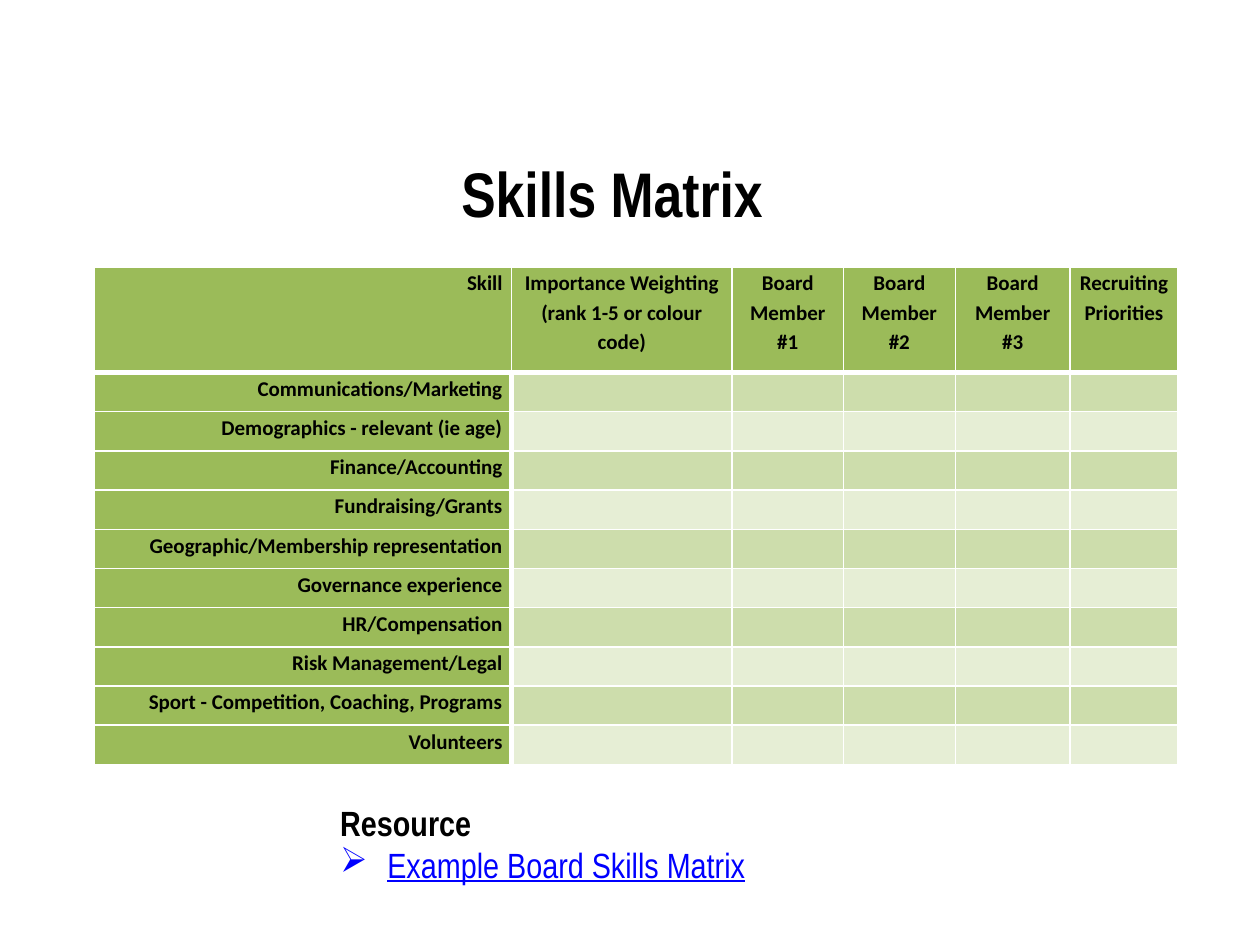
from dataclasses import dataclass

import pptx
import pptx.dml.color
import pptx.enum.text
import pptx.oxml
import pptx.oxml.ns
import pptx.util

Cm = pptx.util.Cm
Pt = pptx.util.Pt
Align = pptx.enum.text.PP_ALIGN

BLACK, WHITE, LINK_BLUE = "000000", "FFFFFF", "0000FF"
GREEN, BAND_COLOURS = "9BBB59", ("CDDDAC", "E6EED5")
THIN, THICK = 1, 3


@dataclass
class Column:
    heading: str
    width: float
    alignment: Align = Align.CENTER


COLUMNS = [
    Column("Skill", 8.41, Align.RIGHT),
    Column("Importance Weighting (rank 1-5 or colour code)", 4.45),
    Column("Board Member #1", 2.24),
    Column("Board Member #2", 2.26),
    Column("Board Member #3", 2.31),
    Column("Recruiting Priorities", 2.18),
]
SKILLS = [
    "Communications/Marketing",
    "Demographics - relevant (ie age)",
    "Finance/Accounting",
    "Fundraising/Grants",
    "Geographic/Membership representation",
    "Governance experience",
    "HR/Compensation",
    "Risk Management/Legal",
    "Sport - Competition, Coaching, Programs",
    "Volunteers",
]
HEADER_HEIGHT, ROW_HEIGHT = 2.13, 0.79


def colour(value: str):
    return pptx.dml.color.RGBColor.from_string(value)


def write(paragraph, text: str, *, size: float, font: str, color: str = BLACK,
          bold: bool = True, underline: bool = False, alignment=Align.LEFT,
          line_spacing: float = 1.0, space_after: float = 0) -> None:
    paragraph.alignment = alignment
    paragraph.line_spacing = line_spacing
    paragraph.space_after = Pt(space_after)
    # An empty cell still needs its font size, or its row grows
    target = paragraph.font
    if text:
        run = paragraph.add_run()
        run.text = text
        target = run.font
    target.size = Pt(size)
    target.name = font
    target.bold = bold
    target.underline = underline
    target.color.rgb = colour(color)


def add_bullet(paragraph, character: str, indent: float) -> None:
    properties = paragraph._p.get_or_add_pPr()
    properties.set("marL", str(Cm(indent)))
    properties.set("indent", str(-Cm(indent)))
    bullet = pptx.oxml.parse_xml(
        f'<a:buChar {pptx.oxml.ns.nsdecls("a")} char="{character}"/>')
    properties.append(bullet)


def add_text_frame(slide, left: float, top: float, width: float, height: float,
                   margin: float):
    box = slide.shapes.add_textbox(Cm(left), Cm(top), Cm(width), Cm(height))
    frame = box.text_frame
    frame.word_wrap = True
    frame.margin_left = frame.margin_right = Cm(margin)
    frame.margin_top = frame.margin_bottom = Cm(margin)
    return frame


def set_borders(cell, **widths: float) -> None:
    properties = cell._tc.get_or_add_tcPr()
    for position, side in enumerate("LRTB"):
        width = Pt(widths.get(side, THIN))
        line = pptx.oxml.parse_xml(
            f'<a:ln{side} {pptx.oxml.ns.nsdecls("a")} w="{width}"><a:solidFill>'
            f'<a:srgbClr val="{WHITE}"/></a:solidFill></a:ln{side}>')
        properties.insert(position, line)


def fill_cell(cell, row: int, column: int, text: str) -> None:
    is_label = row == 0 or column == 0
    cell.fill.solid()
    cell.fill.fore_color.rgb = colour(
        GREEN if is_label else BAND_COLOURS[(row - 1) % 2])
    cell.margin_left = cell.margin_right = Cm(0.18)
    cell.margin_top = cell.margin_bottom = 0
    set_borders(
        cell,
        L=THICK if row > 0 and column == 1 else THIN,
        R=THICK if row > 0 and column == 0 else THIN,
        T=THICK if row == 1 else THIN,
        B=THICK if row == 0 else THIN,
    )
    write(cell.text_frame.paragraphs[0], text, size=12, font="Calibri",
          alignment=COLUMNS[column].alignment,
          line_spacing=1.15 if text else 1.0, space_after=10 if text else 0)


def add_skills_table(slide, left: float, top: float) -> None:
    width = sum(column.width for column in COLUMNS)
    height = HEADER_HEIGHT + ROW_HEIGHT * len(SKILLS)
    table = slide.shapes.add_table(
        len(SKILLS) + 1, len(COLUMNS), Cm(left), Cm(top), Cm(width), Cm(height)).table
    table.first_row = table.horz_banding = False
    for table_column, column in zip(table.columns, COLUMNS):
        table_column.width = Cm(column.width)

    blanks = [""] * (len(COLUMNS) - 1)
    contents = [[column.heading for column in COLUMNS]]
    contents += [[skill, *blanks] for skill in SKILLS]
    for row, texts in enumerate(contents):
        table.rows[row].height = Cm(ROW_HEIGHT if row else HEADER_HEIGHT)
        for column, text in enumerate(texts):
            fill_cell(table.cell(row, column), row, column, text)


def main() -> None:
    presentation = pptx.Presentation()
    presentation.slide_width, presentation.slide_height = Cm(25.4), Cm(19.05)
    slide = presentation.slides.add_slide(presentation.slide_layouts[6])

    # Title
    title = add_text_frame(slide, 0.91, 3.12, 22.86, 2.41, margin=0)
    write(title.paragraphs[0], "Skills Matrix", size=36, font="Arial Narrow",
          alignment=Align.CENTER)

    # Skills by board member
    add_skills_table(slide, 1.9, 5.38)

    # Resource list
    resource = add_text_frame(slide, 6.73, 16.03, 16.28, 1.96, margin=0.13)
    write(resource.paragraphs[0], "Resource", size=20, font="Arial Narrow")
    item = resource.add_paragraph()
    add_bullet(item, "➢", 0.95)
    write(item, "Example Board Skills Matrix", size=20, font="Arial Narrow",
          color=LINK_BLUE, bold=False, underline=True)

    presentation.save("out.pptx")


if __name__ == "__main__":
    main()
